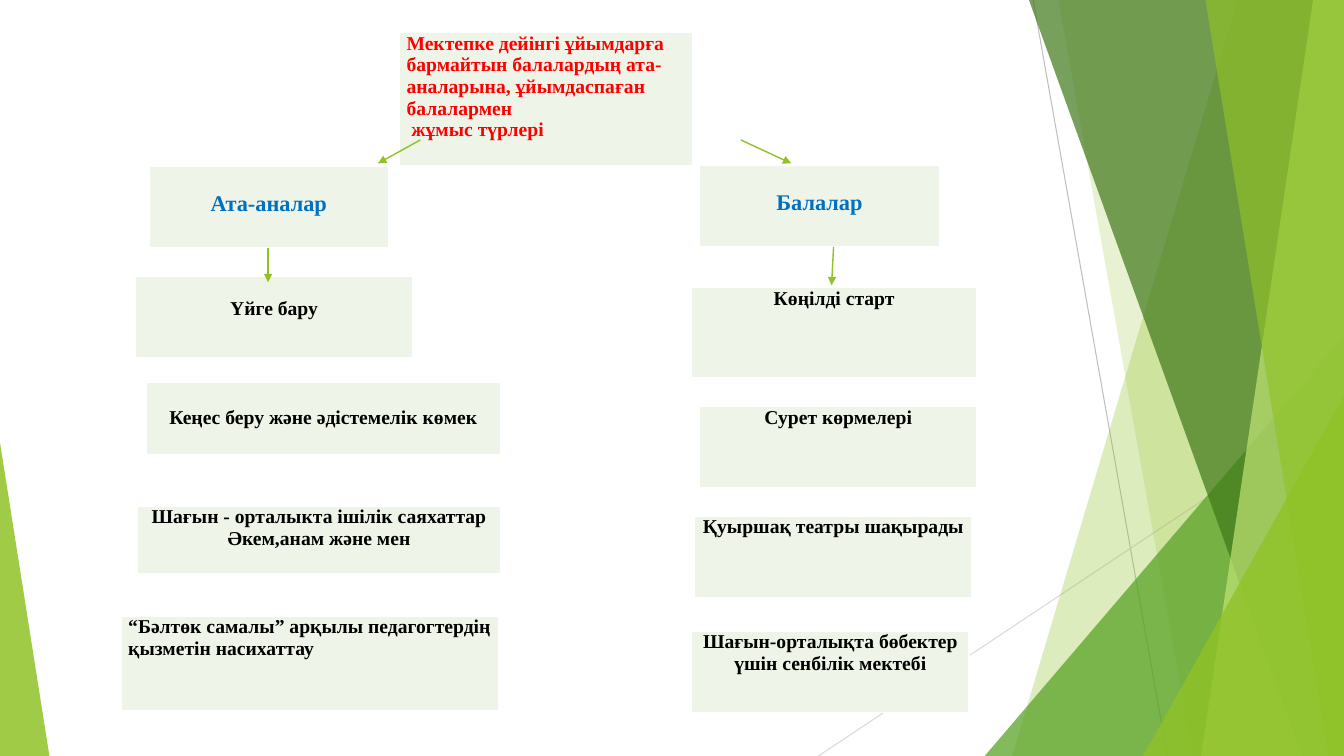
from lxml.etree import SubElement
from pptx import Presentation
from pptx.dml.color import RGBColor as Color
from pptx.enum.shapes import MSO_CONNECTOR as Connector, MSO_SHAPE as Preset
from pptx.enum.text import PP_ALIGN as Align
from pptx.oxml.ns import qn
from pptx.util import Pt

WIDTH, HEIGHT = 960, 540
COLORS = {
    "lime": "90C226", "green": "54A021", "forest": "3F7819", "pale": "C0E474",
    "grey": "BFBFBF", "silver": "D9D9D9", "white": "FFFFFF", "panel": "EEF4E8",
    "red": "FF0000", "blue": "0070C0", "black": "000000",
}
CELL_FORMAT = {"margin_left": Pt(5), "margin_right": Pt(5), "margin_bottom": Pt(0)}
TABLE_FORMAT = {"first_row": False, "horz_banding": False}
FONT_FORMAT = {"name": "Times New Roman", "bold": True}


def apply_format(target, values):
    for name, value in values.items():
        setattr(target, name, value)


class SlideBuilder:
    """Draws styled elements on one slide, with all lengths in points."""

    def __init__(self, slide):
        self.slide = slide

    def color(self, name):
        return Color.from_string(COLORS[name])

    def paint(self, shape, color, opacity):
        shape.shadow.inherit = False
        shape.fill.solid()
        shape.fill.fore_color.rgb = self.color(color)
        shape.line.fill.background()
        fill_color = shape.fill._xPr.find(qn("a:solidFill"))[0]
        SubElement(fill_color, qn("a:alpha"), val=str(opacity * 1000))

    def facet(self, points, color, opacity):
        builder = self.slide.shapes.build_freeform(*points[0], scale=Pt(1))
        builder.add_line_segments(points[1:], close=True)
        self.paint(builder.convert_to_shape(), color, opacity)

    def triangle(self, left, top, width, apex, color, opacity):
        shape = self.slide.shapes.add_shape(
            Preset.ISOSCELES_TRIANGLE, Pt(left), Pt(top), Pt(width), Pt(HEIGHT - top))
        shape.adjustments[0] = apex
        self.paint(shape, color, opacity)

    def line(self, start, end, color, width, arrow=False):
        connector = self.slide.shapes.add_connector(
            Connector.STRAIGHT, *(Pt(value) for value in start + end))
        connector.line.color.rgb = self.color(color)
        connector.line.width = Pt(width)
        if arrow:
            SubElement(connector.line._get_or_add_ln(), qn("a:tailEnd"), type="triangle")
        SubElement(connector._element.spPr, qn("a:effectLst"))

    def border(self, cell):
        properties = cell._tc.get_or_add_tcPr()
        for side in ("lnL", "lnR", "lnT", "lnB"):
            edge = SubElement(properties, qn(f"a:{side}"), w=str(Pt(1)))
            fill = SubElement(edge, qn("a:solidFill"))
            SubElement(fill, qn("a:srgbClr"), val=COLORS["white"])

    def box(self, left, top, width, height, lines, inset=0, size=14,
            color="black", align=Align.CENTER):
        frame = self.slide.shapes.add_table(
            1, 1, Pt(left), Pt(top), Pt(width), Pt(height))
        apply_format(frame.table, TABLE_FORMAT)
        cell = frame.table.cell(0, 0)
        apply_format(cell, CELL_FORMAT | {"margin_top": Pt(inset)})
        self.border(cell)
        cell.fill.solid()
        cell.fill.fore_color.rgb = self.color("panel")
        cell.text = "\n".join(lines)
        for paragraph in cell.text_frame.paragraphs:
            paragraph.alignment = align
            for run in paragraph.runs:
                apply_format(run.font, FONT_FORMAT | {"size": Pt(size)})
                run.font.color.rgb = self.color(color)


def draw_background(builder):
    builder.line((738, 0), (833.8, HEIGHT), "grey", 0.75)
    builder.line((WIDTH, 290.2), (584.6, HEIGHT), "silver", 0.75)
    right_edge = [(WIDTH, 0), (WIDTH, HEIGHT)]
    builder.facet([(884.2, 0), *right_edge, (722.9, HEIGHT)], "lime", 30)
    builder.facet([(756, 0), *right_edge, (851.8, HEIGHT)], "lime", 20)
    builder.triangle(703.4, 239.8, 256.6, 1, "green", 72)
    builder.facet([(735.1, 0), *right_edge, (929.5, HEIGHT)], "forest", 70)
    builder.facet([(938.2, 0), *right_edge, (858.2, HEIGHT)], "pale", 70)
    builder.facet([(861.1, 0), *right_edge, (949, HEIGHT)], "lime", 65)
    builder.triangle(816.5, 283, 143.5, 1, "lime", 80)
    builder.triangle(0, 316.1, 35.3, 0, "lime", 85)


def draw_scheme(builder):
    builder.box(285.4, 23.3, 209.2, 95, [
        "Мектепке дейінгі ұйымдарға бармайтын балалардың ата-аналарына, "
        "ұйымдаспаған балалармен", " жұмыс түрлері"], color="red", align=Align.LEFT)
    for left, top, heading in [(106.4, 119, "Ата-аналар"), (499.8, 118.3, "Балалар")]:
        builder.box(left, top, 171.2, 58, [heading], 17.7, 16, "blue")

    builder.box(96.8, 197.2, 198, 58, ["Үйге бару"], 15.5)
    builder.box(104.6, 272.9, 253, 52, ["Кеңес беру және әдістемелік көмек"], 17.7)
    builder.box(98.2, 361.4, 259.5, 48.5,
                ["Шағын - орталыкта ішілік саяхаттар Әкем,анам және мен"])
    builder.box(86.6, 440.2, 269.6, 67.5,
                ["“Бәлтөк самалы” арқылы педагогтердің қызметін насихаттау"],
                align=Align.LEFT)

    for start, end in [((300.2, 100), (270, 116.7)), ((529.2, 100), (565.2, 116.7)),
                       ((595.4, 176.4), (594, 203.8)), ((191.5, 177), (191.5, 201.6))]:
        builder.line(start, end, "lime", 1, arrow=True)

    for left, top, width, height, text in [
        (494.2, 205.4, 203.4, 64, "Көңілді старт"),
        (499.8, 290.4, 198, 58, "Сурет көрмелері"),
        (496.3, 368.6, 198, 58, "Қуыршақ театры шақырады"),
        (494.2, 450.7, 198, 58, "Шағын-орталықта бөбектер үшін сенбілік мектебі"),
    ]:
        builder.box(left, top, width, height, [text])


def main():
    presentation = Presentation()
    apply_format(presentation, {"slide_width": Pt(WIDTH), "slide_height": Pt(HEIGHT)})
    builder = SlideBuilder(presentation.slides.add_slide(presentation.slide_layouts[6]))
    draw_background(builder)
    draw_scheme(builder)
    presentation.save("out.pptx")


if __name__ == "__main__":
    main()
